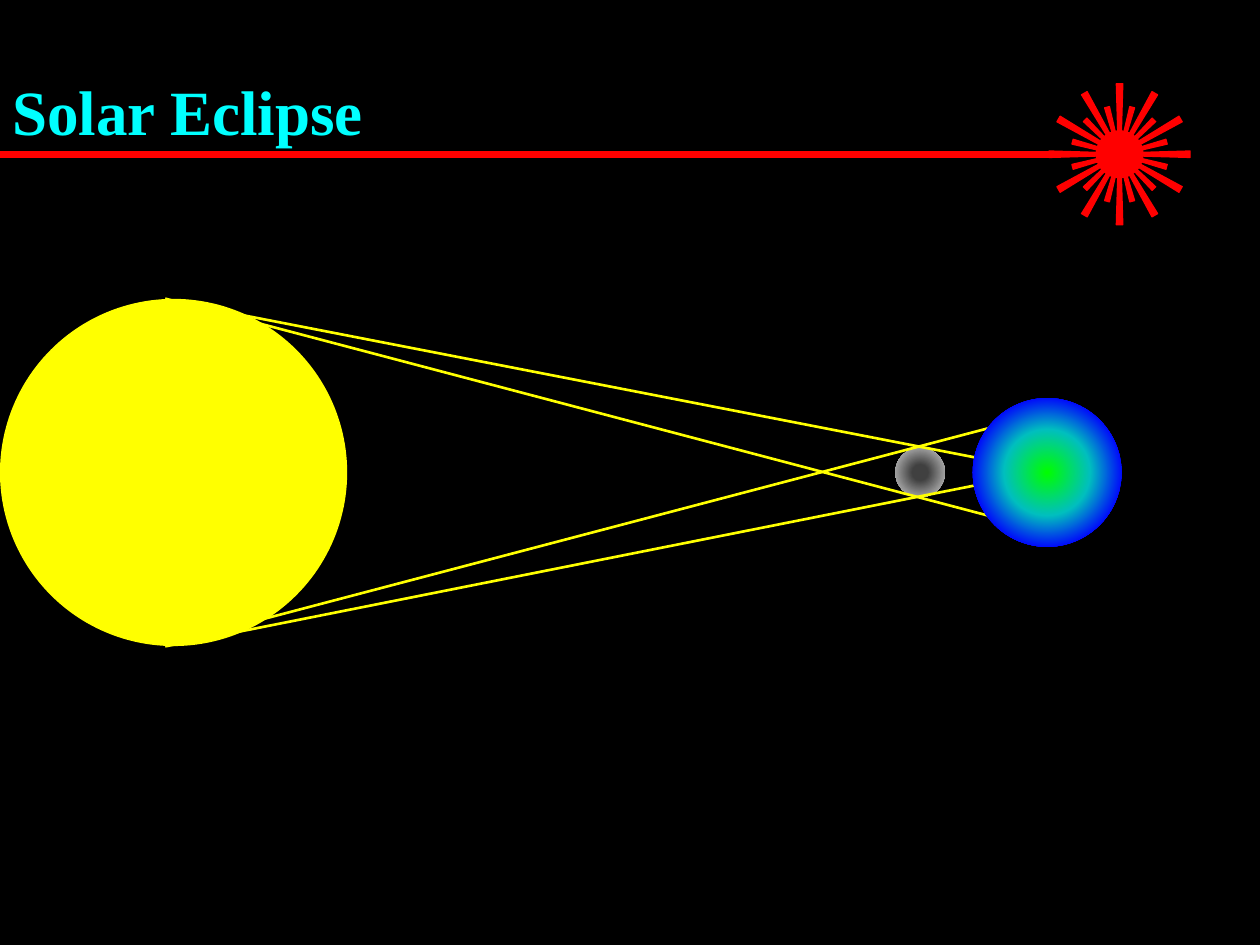
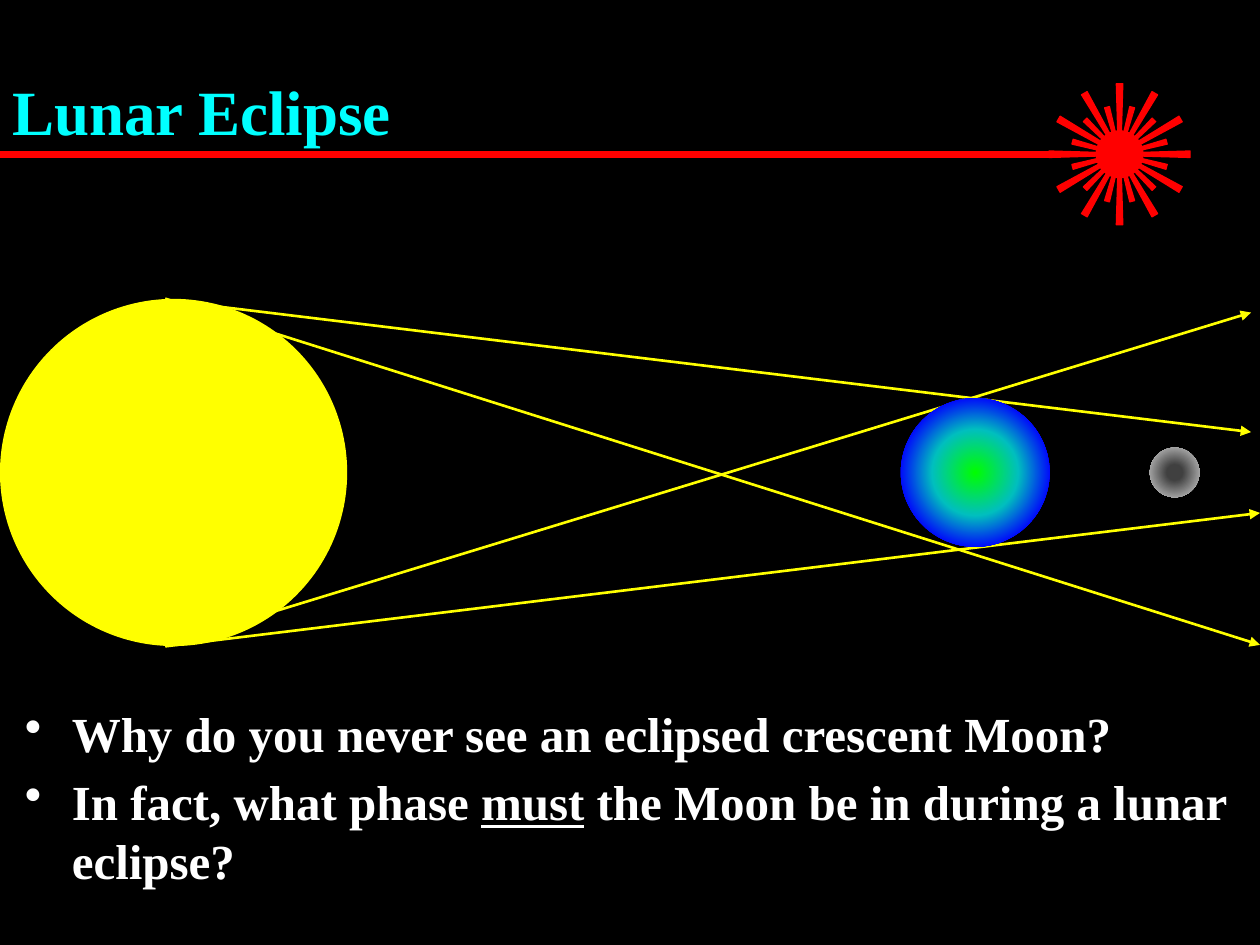
from dataclasses import dataclass
from math import cos, radians, sin
from typing import NamedTuple

from lxml import etree
from pptx import Presentation
from pptx import util as u
from pptx.dml.color import RGBColor
from pptx.enum import shapes, text
from pptx.oxml import parse_xml
from pptx.oxml.ns import nsdecls, qn
from pptx.shapes.autoshape import Shape
from pptx.slide import Slide


class Stop(NamedTuple):
    percent: int
    color: str


@dataclass(frozen=True)
class Theme:
    font: str = "Times New Roman"
    background: str = "000000"
    title: str = "00FFFF"
    body: str = "FFFFFF"
    beam: str = "FF0000"
    sunlight: str = "FFFF00"
    moon: tuple[Stop, ...] = (Stop(22, "404040"), Stop(100, "D9D9D9"))
    earth: tuple[Stop, ...] = (Stop(0, "00FF00"), Stop(41, "00BFBF"), Stop(73, "0000FF"))
    title_size: float = 36
    body_size: float = 28
    beam_line: float = 0.75
    ray_line: float = 1.5


class Spikes(NamedTuple):
    """A ring of twelve tapered spikes; lengths in cm, angles clockwise from the top."""
    first_angle: int
    inner_radius: float
    outer_radius: float
    inner_width: float
    outer_width: float


class Point(NamedTuple):
    x: float
    y: float


class TextRun(NamedTuple):
    words: str
    underline: bool = False


@dataclass(frozen=True)
class Eclipse:
    title: str
    moon_x: float
    earth_x: float
    ray_ends: tuple[Point, ...]
    questions: tuple[tuple[TextRun, ...], ...] = ()


THEME = Theme()
WIDTH, HEIGHT = 25.4, 19.05
ORBIT_Y = HEIGHT / 2
SUN_RADIUS, MOON_RADIUS, EARTH_RADIUS = 3.5, 0.5, 1.5
BURST = Point(22.57, 3.11)
BURST_RADIUS = 0.47
BURST_RINGS = (Spikes(0, 0.39, 1.42, 0.07, 0.13), Spikes(15, 0.37, 0.98, 0.06, 0.1))
RAY_STARTS = (Point(3.33, 6.02), Point(3.33, 13.03), Point(3.33, 13), Point(3.33, 6.05))

ECLIPSES = (
    Eclipse("Solar Eclipse", 18.55, 21.11,
            (Point(21.46, 10.8), Point(22.35, 9.25), Point(21.34, 8.26), Point(22.02, 9.68))),
    Eclipse("Lunar Eclipse", 23.68, 19.66,
            (Point(25.4, 13), Point(25.4, 10.34), Point(25.22, 6.3), Point(25.22, 8.71)),
            ((TextRun("Why do you never see an eclipsed crescent Moon?"),),
             (TextRun("In fact, what phase "), TextRun("must", True),
              TextRun(" the Moon be in during a lunar eclipse?")))),
)


def rgb(color: str) -> RGBColor:
    return RGBColor.from_string(color)


def paint(shape: Shape, color: str) -> None:
    shape.shadow.inherit = False
    shape.fill.solid()
    shape.fill.fore_color.rgb = rgb(color)
    shape.line.fill.background()


def paint_beam(shape: Shape) -> None:
    paint(shape, THEME.beam)
    shape.line.color.rgb = rgb(THEME.beam)
    shape.line.width = u.Pt(THEME.beam_line)


def paint_radial(shape: Shape, stops: tuple[Stop, ...]) -> None:
    """Fill with a gradient that runs outwards from the centre."""
    paint(shape, stops[0].color)
    listing = "".join(f'<a:gs pos="{stop.percent * 1000}"><a:srgbClr val="{stop.color}"/></a:gs>'
                      for stop in stops)
    gradient = parse_xml(
        f'<a:gradFill {nsdecls("a")} rotWithShape="1"><a:gsLst>{listing}</a:gsLst>'
        '<a:path path="circle"><a:fillToRect l="50000" t="50000" r="50000" b="50000"/></a:path>'
        '</a:gradFill>')
    properties = shape.element.spPr
    properties.replace(properties.find(qn("a:solidFill")), gradient)


def add_disc(parent, center: Point, radius: float) -> Shape:
    return parent.add_shape(shapes.MSO_SHAPE.OVAL, u.Cm(center.x - radius),
                            u.Cm(center.y - radius), u.Cm(2 * radius), u.Cm(2 * radius))


def add_spike(parent, ring: Spikes, angle: int) -> None:
    turn = radians(angle)

    def corner(across: float, out: float) -> tuple[int, int]:
        return (u.Cm(BURST.x + across * cos(turn) + out * sin(turn)),
                u.Cm(BURST.y + across * sin(turn) - out * cos(turn)))

    outer, inner = ring.outer_width / 2, ring.inner_width / 2
    outline = parent.build_freeform(*corner(-outer, ring.outer_radius))
    outline.add_line_segments([corner(outer, ring.outer_radius), corner(inner, ring.inner_radius),
                               corner(-inner, ring.inner_radius)])
    paint_beam(outline.convert_to_shape())


def add_beam(slide: Slide) -> None:
    """Draw the red title rule and the burst at its end."""
    beam = slide.shapes.add_group_shape().shapes
    paint_beam(add_disc(beam, BURST, BURST_RADIUS))
    for ring in BURST_RINGS:
        for angle in range(ring.first_angle, 360, 30):
            add_spike(beam, ring, angle)
    paint_beam(beam.add_shape(shapes.MSO_SHAPE.RECTANGLE,
                              0, u.Cm(3.05), u.Cm(21.21), u.Cm(0.13)))


def add_text_frame(slide: Slide, left: float, top: float, width: float, height: float):
    frame = slide.shapes.add_textbox(u.Cm(left), u.Cm(top), u.Cm(width), u.Cm(height)).text_frame
    frame.word_wrap = True
    return frame


def set_font(paragraph, size: float, color: str) -> None:
    font = paragraph.font
    font.name, font.size, font.bold = THEME.font, u.Pt(size), True
    font.color.rgb = rgb(color)


def add_title(slide: Slide, title: str) -> None:
    frame = add_text_frame(slide, 0, 0.64, 21.59, 3.18)
    frame.vertical_anchor = text.MSO_ANCHOR.MIDDLE
    frame.text = title
    set_font(frame.paragraphs[0], THEME.title_size, THEME.title)


def add_questions(slide: Slide, questions: tuple[tuple[TextRun, ...], ...]) -> None:
    frame = add_text_frame(slide, 0.25, 14.05, 24.77, 4.72)
    for index, question in enumerate(questions):
        paragraph = frame.add_paragraph() if index else frame.paragraphs[0]
        paragraph.space_before = u.Pt(THEME.body_size * 0.2)
        set_font(paragraph, THEME.body_size, THEME.body)
        properties = paragraph._p.get_or_add_pPr()
        properties.set("marL", str(u.Cm(0.95)))
        properties.set("indent", str(-u.Cm(0.95)))
        bullet = parse_xml(f'<a:buChar {nsdecls("a")} char="•"/>')
        properties.find(qn("a:defRPr")).addprevious(bullet)
        for part in question:
            run = paragraph.add_run()
            run.text = part.words
            if part.underline:
                run.font.underline = True


def add_ray(slide: Slide, start: Point, end: Point) -> None:
    ray = slide.shapes.add_connector(shapes.MSO_CONNECTOR.STRAIGHT, u.Cm(start.x), u.Cm(start.y),
                                     u.Cm(end.x), u.Cm(end.y))
    ray.line.color.rgb = rgb(THEME.sunlight)
    ray.line.width = u.Pt(THEME.ray_line)
    etree.SubElement(ray.line._get_or_add_ln(), qn("a:tailEnd"), type="triangle")
    etree.SubElement(ray._element.spPr, qn("a:effectLst"))


def add_eclipse(slide: Slide, eclipse: Eclipse) -> None:
    add_beam(slide)
    add_title(slide, eclipse.title)
    paint(add_disc(slide.shapes, Point(SUN_RADIUS, ORBIT_Y), SUN_RADIUS), THEME.sunlight)
    paint_radial(add_disc(slide.shapes, Point(eclipse.moon_x, ORBIT_Y), MOON_RADIUS), THEME.moon)
    for start, end in zip(RAY_STARTS, eclipse.ray_ends):
        add_ray(slide, start, end)
    paint_radial(add_disc(slide.shapes, Point(eclipse.earth_x, ORBIT_Y), EARTH_RADIUS),
                 THEME.earth)
    if eclipse.questions:
        add_questions(slide, eclipse.questions)


def main() -> None:
    deck = Presentation()
    deck.slide_width, deck.slide_height = u.Cm(WIDTH), u.Cm(HEIGHT)
    backdrop = deck.slide_master.background.fill
    backdrop.solid()
    backdrop.fore_color.rgb = rgb(THEME.background)
    for eclipse in ECLIPSES:
        add_eclipse(deck.slides.add_slide(deck.slide_layouts[6]), eclipse)
    deck.save("out.pptx")


if __name__ == "__main__":
    main()
